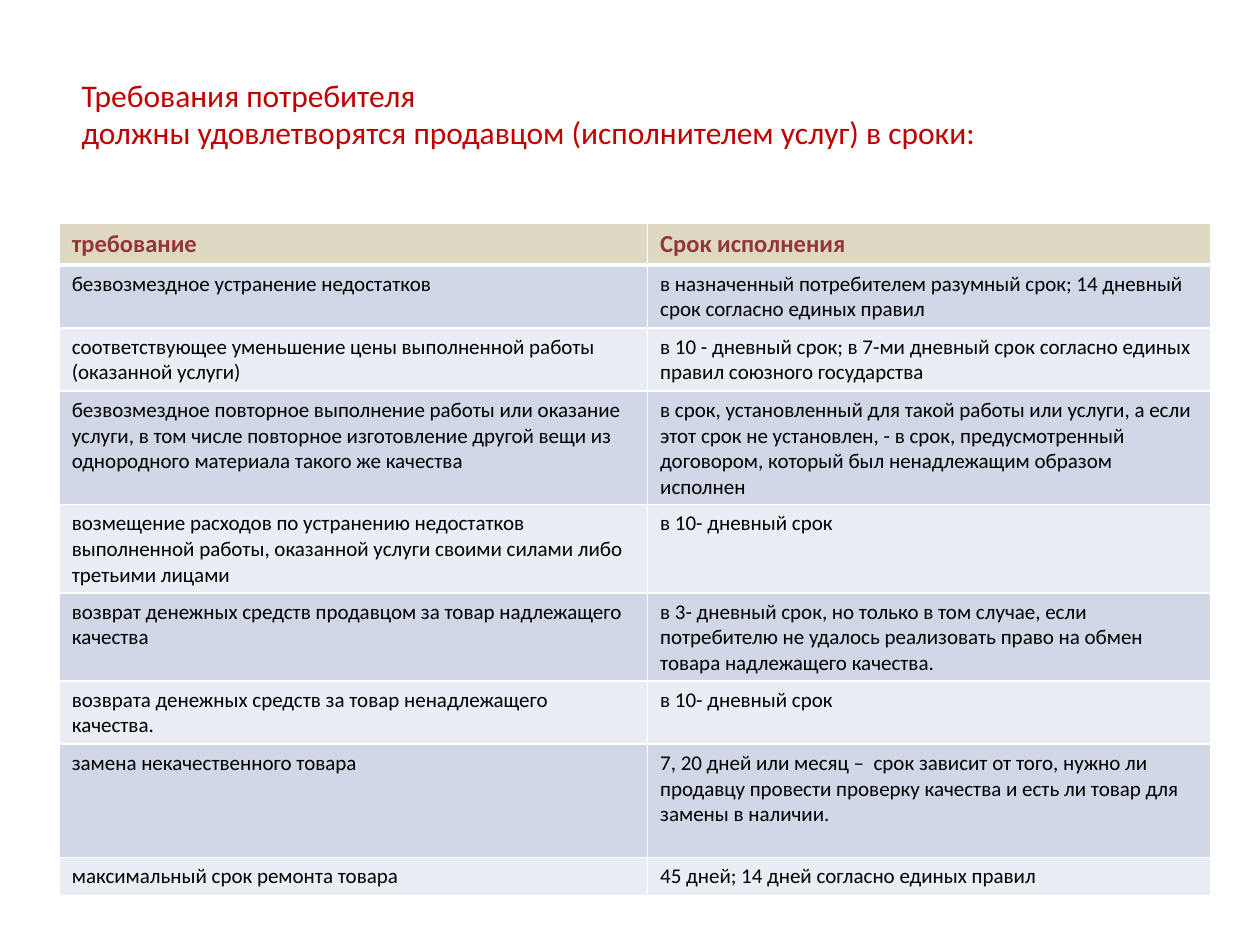
"""Build a slide with a table of deadlines for meeting consumer claims."""
from lxml.etree import SubElement
from pptx import Presentation
from pptx.dml.color import RGBColor as RGB
from pptx.oxml.ns import qn
from pptx.util import Inches, Pt

FONT = "Calibri"
TITLE_RED = RGB(0xC0, 0x00, 0x00)
HEADER_RED = RGB(0x95, 0x37, 0x35)
BLACK = RGB(0x00, 0x00, 0x00)
WHITE = RGB(0xFF, 0xFF, 0xFF)
HEADER_FILL = RGB(0xDD, 0xD9, 0xC3)
BAND_FILLS = (RGB(0xE9, 0xED, 0xF4), RGB(0xD0, 0xD8, 0xE8))

TITLE_LINES = (
    "Требования потребителя",
    "должны удовлетворятся продавцом (исполнителем услуг) в сроки:",
)
COLUMN_WIDTHS = (4.67, 4.47)
HEADERS = ("требование", "Срок исполнения")
CLAIMS = (
    (0.5, "безвозмездное устранение недостатков",
     "в назначенный потребителем разумный срок; 14 дневный срок согласно единых правил"),
    (0.5, "соответствующее уменьшение цены выполненной работы (оказанной услуги)",
     "в 10 - дневный срок; в 7-ми дневный срок согласно единых правил союзного государства"),
    (0.9, "безвозмездное повторное выполнение работы или оказание услуги, в том числе "
     "повторное изготовление другой вещи из однородного материала такого же качества",
     "в срок, установленный для такой работы или услуги, а если этот срок не установлен, "
     "- в срок, предусмотренный договором, который был ненадлежащим образом исполнен"),
    (0.7, "возмещение расходов по устранению недостатков выполненной работы, "
     "оказанной услуги своими силами либо третьими лицами",
     "в 10- дневный срок"),
    (0.7, "возврат денежных средств продавцом за товар надлежащего качества",
     "в 3- дневный срок, но только в том случае, если потребителю не удалось "
     "реализовать право на обмен товара надлежащего качества."),
    (0.5, "возврата денежных средств за товар ненадлежащего качества.",
     "в 10- дневный срок"),
    (0.9, "замена некачественного товара",
     "7, 20 дней или месяц –  срок зависит от того, нужно ли продавцу провести "
     "проверку качества и есть ли товар для замены в наличии."),
    (0.3, "максимальный срок ремонта товара",
     "45 дней; 14 дней согласно единых правил"),
)


def add_run(paragraph, text, size, color, bold=False):
    run = paragraph.add_run()
    run.text = text
    run.font.name = FONT
    run.font.size = Pt(size)
    run.font.bold = bold
    run.font.color.rgb = color


def add_title(slide):
    title = slide.shapes.add_textbox(Inches(0.55), Inches(0.55), Inches(8.83), Inches(0.75))
    frame = title.text_frame
    frame.word_wrap = True
    for index, line in enumerate(TITLE_LINES):
        paragraph = frame.add_paragraph() if index else frame.paragraphs[0]
        add_run(paragraph, line, 18, TITLE_RED)


def set_borders(cell, top, bottom):
    properties = cell._tc.get_or_add_tcPr()
    for side, width in (("L", 1), ("R", 1), ("T", top), ("B", bottom)):
        border = SubElement(properties, qn(f"a:ln{side}"), w=str(Pt(width)))
        fill = SubElement(border, qn("a:solidFill"))
        SubElement(fill, qn("a:srgbClr"), val=str(WHITE))


def fill_cell(cell, text, row):
    is_header = row == 0
    set_borders(cell, top=3 if row == 1 else 1, bottom=3 if is_header else 1)
    cell.fill.solid()
    cell.fill.fore_color.rgb = HEADER_FILL if is_header else BAND_FILLS[row % 2]
    size, color = (14, HEADER_RED) if is_header else (12, BLACK)
    add_run(cell.text_frame.paragraphs[0], text, size, color, bold=is_header)


def add_deadline_table(slide):
    rows = ((0.33, *HEADERS), *CLAIMS)
    table = slide.shapes.add_table(
        len(rows), len(COLUMN_WIDTHS), Inches(0.47), Inches(1.77),
        Inches(sum(COLUMN_WIDTHS)), Inches(sum(row[0] for row in rows)),
    ).table
    for column, width in zip(table.columns, COLUMN_WIDTHS):
        column.width = Inches(width)
    for row, (height, *texts) in enumerate(rows):
        table.rows[row].height = Inches(height)
        for column, text in enumerate(texts):
            fill_cell(table.cell(row, column), text, row)


def main():
    deck = Presentation()
    deck.slide_width, deck.slide_height = Inches(10), Inches(7.5)
    slide = deck.slides.add_slide(deck.slide_layouts[6])
    add_title(slide)
    add_deadline_table(slide)
    deck.save("out.pptx")


if __name__ == "__main__":
    main()
